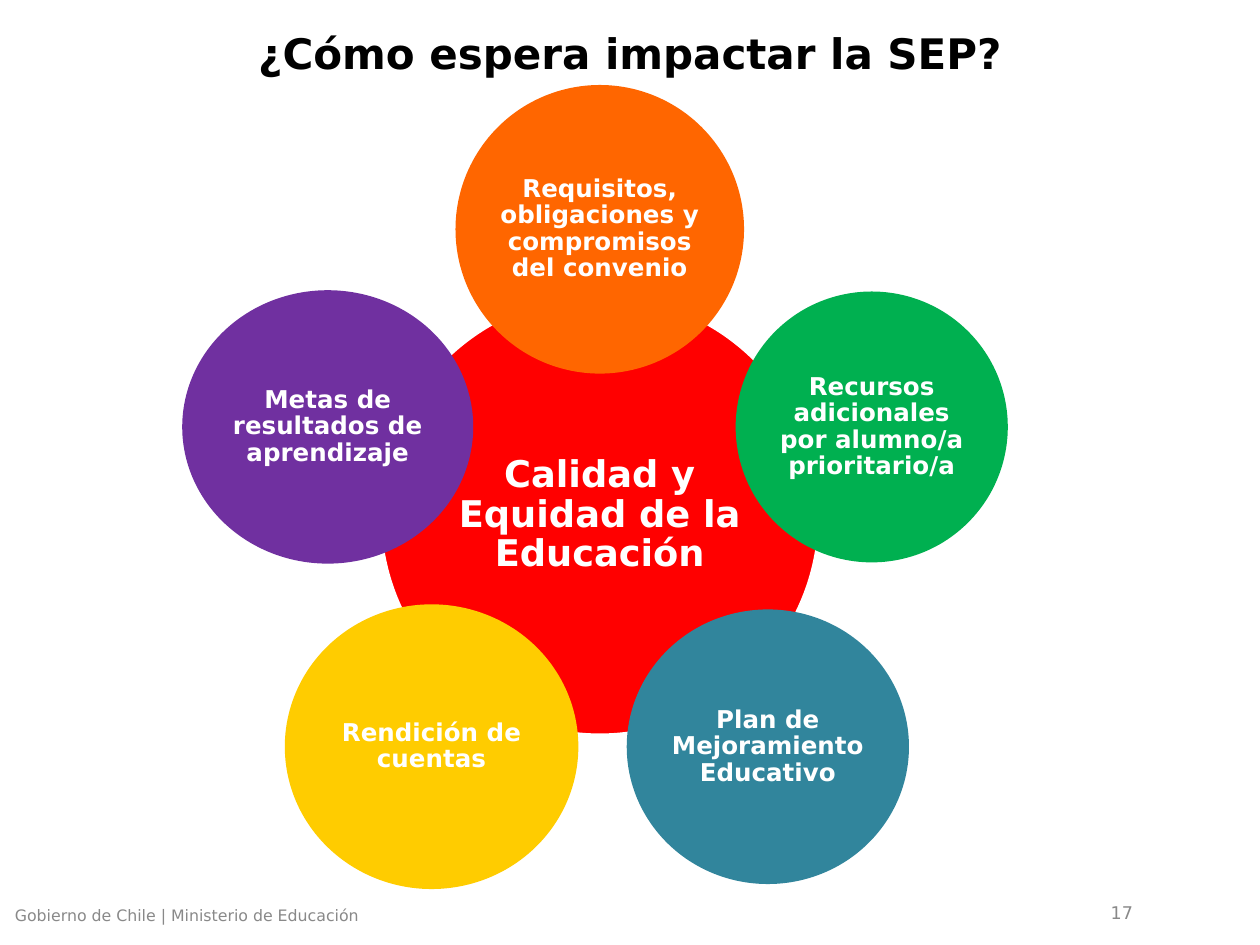
from dataclasses import dataclass
from math import cos, radians, sin

from pptx import Presentation
from pptx.dml.color import RGBColor
from pptx.enum.shapes import MSO_SHAPE
from pptx.enum.text import MSO_ANCHOR, MSO_AUTO_SIZE, PP_ALIGN
from pptx.util import Inches, Pt

FONT = "DejaVu Sans"
GREY = "898989"
WHITE = "FFFFFF"
CENTER_X, CENTER_Y, RING_RADIUS = 4.76, 4.09, 2.27


@dataclass
class Circle:
    text: str
    color: str
    width: float
    height: float


HUB = Circle("Calidad y Equidad de la Educación", "FF0000", 3.49, 3.49)
# Clockwise from the top
RING = [
    Circle("Requisitos, obligaciones y compromisos del convenio", "FF6600", 2.29, 2.29),
    Circle("Recursos adicionales por alumno/a prioritario/a", "00B050", 2.16, 2.15),
    Circle("Plan de Mejoramiento Educativo", "31859C", 2.24, 2.18),
    Circle("Rendición de cuentas", "FFCC00", 2.33, 2.26),
    Circle("Metas de resultados de aprendizaje", "7030A0", 2.31, 2.17),
]


def rgb(color: str) -> RGBColor:
    return RGBColor.from_string(color)


def write_text(box, text: str, *, size: float, color: str, bold=False,
               align=PP_ALIGN.LEFT, anchor=MSO_ANCHOR.TOP, margin=None,
               line_spacing=None):
    frame = box.text_frame
    frame.word_wrap = True
    frame.auto_size = MSO_AUTO_SIZE.NONE
    frame.vertical_anchor = anchor
    if margin is not None:
        frame.margin_left = frame.margin_right = Inches(margin)
        frame.margin_top = frame.margin_bottom = Inches(margin)
    para = frame.paragraphs[0]
    para.alignment = align
    if line_spacing:
        para.line_spacing = line_spacing
    span = para.add_run()
    span.text = text
    span.font.name = FONT
    span.font.size = Pt(size)
    span.font.bold = bold
    span.font.color.rgb = rgb(color)


def add_circle(page, circle: Circle, center_x: float, center_y: float,
               size: float, margin: float):
    shape = page.shapes.add_shape(
        MSO_SHAPE.OVAL, Inches(center_x - circle.width / 2),
        Inches(center_y - circle.height / 2),
        Inches(circle.width), Inches(circle.height))
    shape.shadow.inherit = False
    shape.fill.solid()
    shape.fill.fore_color.rgb = rgb(circle.color)
    shape.line.fill.background()
    write_text(shape, circle.text, size=size, color=WHITE, bold=True,
               align=PP_ALIGN.CENTER, anchor=MSO_ANCHOR.MIDDLE,
               margin=margin, line_spacing=0.9)
    return shape


def add_label(page, left: float, top: float, width: float, height: float,
              text: str, **text_format):
    box = page.shapes.add_textbox(Inches(left), Inches(top),
                                  Inches(width), Inches(height))
    write_text(box, text, color=GREY, **text_format)


def main():
    deck = Presentation()
    deck.slide_width, deck.slide_height = Inches(10), Inches(7.5)
    page = deck.slides.add_slide(deck.slide_layouts[5])

    title = page.shapes.title
    title.left, title.top = Inches(0), Inches(0)
    title.width, title.height = Inches(10), Inches(0.84)
    write_text(title, "¿Cómo espera impactar la SEP?", size=24, color="000000",
               bold=True, align=PP_ALIGN.CENTER, anchor=MSO_ANCHOR.MIDDLE)

    hub = add_circle(page, HUB, CENTER_X, CENTER_Y, size=21, margin=0.03)
    hub.line.color.rgb = rgb(WHITE)
    hub.line.width = Pt(2)
    for index, circle in enumerate(RING):
        angle = radians(index * 360 / len(RING) - 90)
        add_circle(page, circle, CENTER_X + RING_RADIUS * cos(angle),
                   CENTER_Y + RING_RADIUS * sin(angle), size=14, margin=0.02)

    add_label(page, 0.02, 7.14, 3.17, 0.27,
              "Gobierno de Chile | Ministerio de Educación", size=9)
    add_label(page, 6.76, 7.14, 2.33, 0.21, "17", size=10,
              align=PP_ALIGN.RIGHT, anchor=MSO_ANCHOR.MIDDLE)

    deck.save("out.pptx")


if __name__ == "__main__":
    main()
